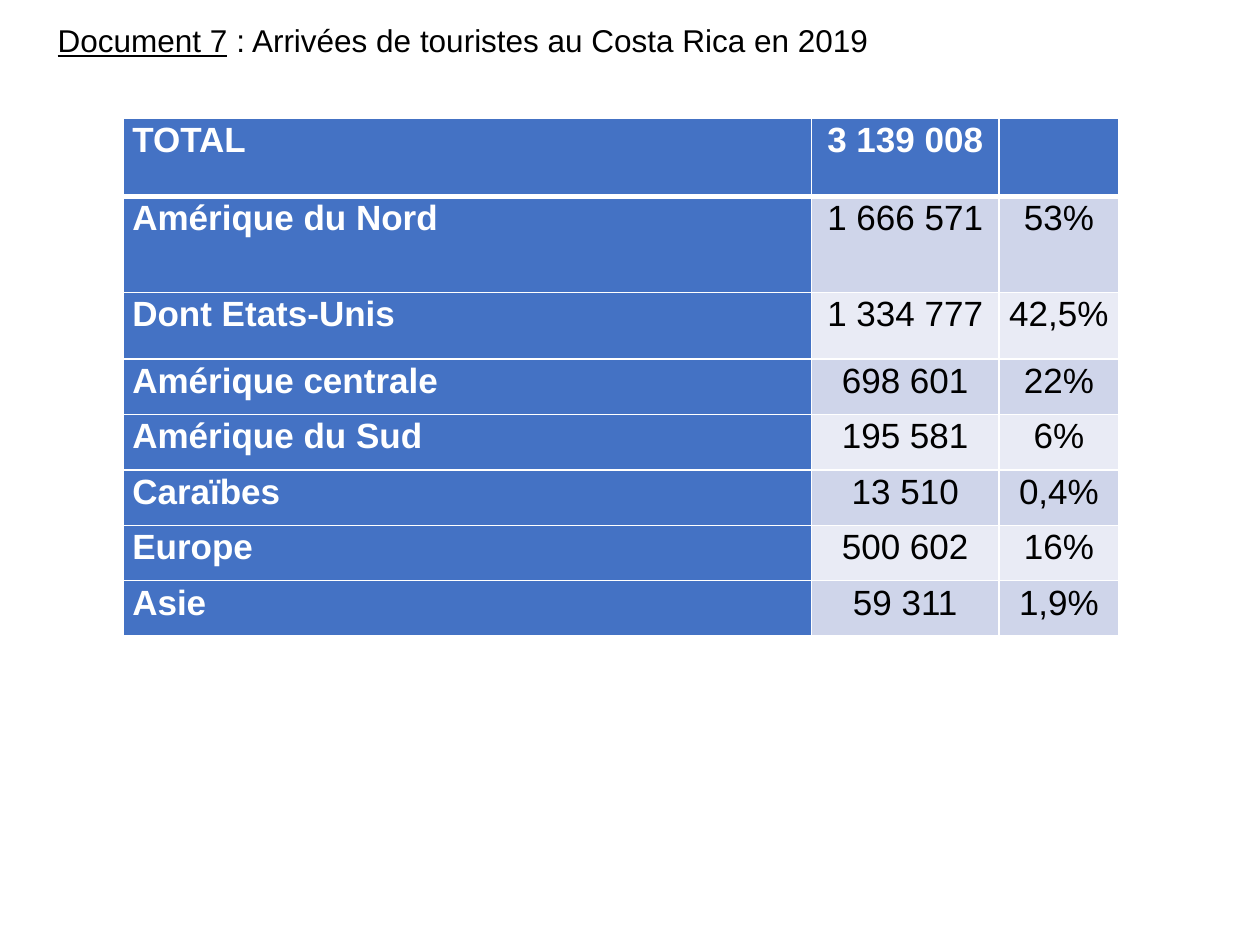
import dataclasses

import lxml.etree
import pptx
import pptx.dml.color
import pptx.enum.text
import pptx.oxml.ns
import pptx.util

Inches = pptx.util.Inches
Pt = pptx.util.Pt
ALIGN = pptx.enum.text.PP_ALIGN


@dataclasses.dataclass(frozen=True)
class Theme:
    font: str = "Arial"
    title_size: int = 18
    table_size: int = 20
    black: str = "000000"
    white: str = "FFFFFF"
    header: str = "4472C4"
    bands: tuple = ("CFD5EA", "E9EBF5")
    rule: int = 1
    header_rule: int = 3


THEME = Theme()

ARRIVALS = [
    ("TOTAL", "3 139 008", ""),
    ("Amérique du Nord", "1 666 571", "53%"),
    ("Dont Etats-Unis", "1 334 777", "42,5%"),
    ("Amérique centrale", "698 601", "22%"),
    ("Amérique du Sud", "195 581", "6%"),
    ("Caraïbes", "13 510", "0,4%"),
    ("Europe", "500 602", "16%"),
    ("Asie", "59 311", "1,9%"),
]
COL_WIDTHS = [5.46, 1.49, 0.95]
ROW_HEIGHTS = [0.62, 0.76, 0.53] + [0.44] * 5


def rgb(color):
    return pptx.dml.color.RGBColor.from_string(color)


def add_run(p, text, size, color=THEME.black, bold=False, underline=False):
    r = p.add_run()
    r.text = text
    r.font.name = THEME.font
    r.font.size = Pt(size)
    r.font.color.rgb = rgb(color)
    r.font.bold = bold
    r.font.underline = underline


def set_borders(cell, **widths):
    """Draw white cell borders; widths in points, keyed L, R, T, B."""
    tc_pr = cell._tc.get_or_add_tcPr()
    qn = pptx.oxml.ns.qn
    for side in "LRTB":
        width = Pt(widths.get(side, THEME.rule))
        ln = lxml.etree.SubElement(tc_pr, qn(f"a:ln{side}"), w=str(width))
        fill = lxml.etree.SubElement(ln, qn("a:solidFill"))
        lxml.etree.SubElement(fill, qn("a:srgbClr"), val=THEME.white)


def add_title(s, left, top, width, height):
    tf = s.shapes.add_textbox(left, top, width, height).text_frame
    tf.word_wrap = True
    tf.auto_size = pptx.enum.text.MSO_AUTO_SIZE.SHAPE_TO_FIT_TEXT
    p = tf.paragraphs[0]
    add_run(p, "Document 7", THEME.title_size, underline=True)
    add_run(p, " : Arrivées de touristes au Costa Rica en 2019", THEME.title_size)


def fill_cell(cell, text, row, col):
    is_header = row == 0 or col == 0
    # Heavier rule between the total and the regions
    heavy = {0: {"B": THEME.header_rule}, 1: {"T": THEME.header_rule}}
    set_borders(cell, **heavy.get(row, {}))
    cell.fill.solid()
    cell.fill.fore_color.rgb = rgb(THEME.header if is_header else THEME.bands[(row - 1) % 2])
    cell.margin_left = cell.margin_right = Inches(0.07)
    cell.margin_top = cell.margin_bottom = 0
    p = cell.text_frame.paragraphs[0]
    p.alignment = ALIGN.LEFT if col == 0 else ALIGN.CENTER
    p.line_spacing = 1.07
    p.space_after = Pt(8)
    if text:
        add_run(p, text, THEME.table_size, bold=is_header,
                color=THEME.white if is_header else THEME.black)


def add_arrivals_table(s, left, top, width, height):
    table = s.shapes.add_table(
        len(ARRIVALS), len(COL_WIDTHS), left, top, width, height).table
    for column, w in zip(table.columns, COL_WIDTHS):
        column.width = Inches(w)
    for table_row, h in zip(table.rows, ROW_HEIGHTS):
        table_row.height = Inches(h)
    for row, values in enumerate(ARRIVALS):
        for col, text in enumerate(values):
            fill_cell(table.cell(row, col), text, row, col)


def main():
    prs = pptx.Presentation()
    prs.slide_width, prs.slide_height = Inches(10), Inches(7.5)
    s = prs.slides.add_slide(prs.slide_layouts[6])

    # Arrivals by region
    add_arrivals_table(s, Inches(0.98), Inches(0.94),
                       Inches(sum(COL_WIDTHS)), Inches(sum(ROW_HEIGHTS)))
    # Heading
    add_title(s, Inches(0.36), Inches(0.12), Inches(6.93), Inches(0.4))

    prs.save("out.pptx")


if __name__ == "__main__":
    main()
